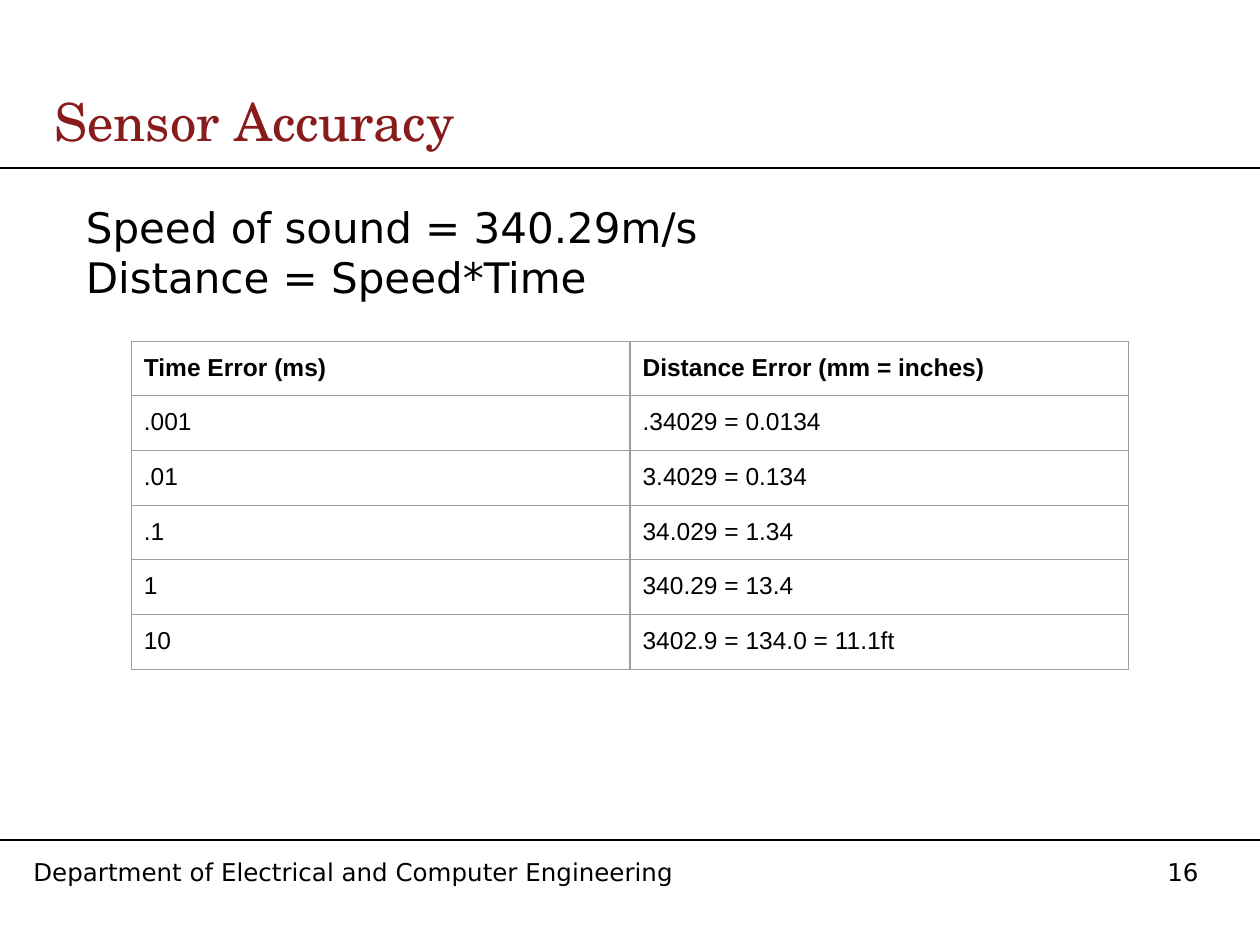
"""Build the sensor accuracy slide with its table of time and distance errors."""
import pptx
import pptx.dml.color
import pptx.enum.shapes
import pptx.enum.text
import pptx.oxml
import pptx.oxml.ns
import pptx.util
from lxml import etree

Pt = pptx.util.Pt
RGBColor = pptx.dml.color.RGBColor
ANCHOR = pptx.enum.text.MSO_ANCHOR
BLACK = RGBColor(0x00, 0x00, 0x00)
MAROON = RGBColor(0x88, 0x1C, 0x1C)
GREY = RGBColor(0x9E, 0x9E, 0x9E)
SANS = "DejaVu Sans"


def style(para, face, size, color, bold=False):
    for run in para.runs:
        run.font.name = face
        run.font.size = Pt(size)
        run.font.color.rgb = color
        run.font.bold = bold


def add_text(left, top, width, height, text, face, size, color, pad=3.6, anchor=ANCHOR.TOP):
    box = slide.shapes.add_textbox(Pt(left), Pt(top), Pt(width), Pt(height))
    frame = box.text_frame
    frame.word_wrap = True
    frame.vertical_anchor = anchor
    frame.margin_left = frame.margin_right = Pt(7.2)
    frame.margin_top = frame.margin_bottom = Pt(pad)
    frame.text = text
    for para in frame.paragraphs:
        style(para, face, size, color)
    return frame


deck = pptx.Presentation()
deck.slide_width = Pt(720)
deck.slide_height = Pt(540)
slide = deck.slides.add_slide(deck.slide_layouts[6])

for y in (96, 480):
    rule = slide.shapes.add_connector(
        pptx.enum.shapes.MSO_CONNECTOR.STRAIGHT, Pt(0), Pt(y), Pt(720), Pt(y))
    rule.line.color.rgb = BLACK
    rule.line.width = Pt(1)
    etree.SubElement(rule.line._get_or_add_ln().getparent(), pptx.oxml.ns.qn("a:effectLst"))

add_text(660, 486, 48, 24, "16", SANS, 14, BLACK)
add_text(12, 486, 401, 24, "Department of Electrical and Computer Engineering", SANS, 14, BLACK)
add_text(24, 48, 696, 42, "Sensor Accuracy", "TeX Gyre Schola", 30, MAROON, 7.2, ANCHOR.MIDDLE)

body = add_text(30, 108, 642, 354, "Speed of sound = 340.29m/s\nDistance = Speed*Time",
                SANS, 24, BLACK, 7.2)
for para in body.paragraphs:
    props = para._p.get_or_add_pPr()
    props.set("marL", str(Pt(27)))
    props.set("indent", str(Pt(-15)))

rows = [
    ("Time Error (ms)", "Distance Error (mm = inches)"),
    (".001", ".34029 = 0.0134"),
    (".01", "3.4029 = 0.134"),
    (".1", "34.029 = 1.34"),
    ("1", "340.29 = 13.4"),
    ("10", "3402.9 = 134.0 = 11.1ft"),
]
grid = slide.shapes.add_table(len(rows), 2, Pt(75), Pt(195), Pt(570), Pt(180.6)).table
grid.first_row = grid.horz_banding = False
for col in grid.columns:
    col.width = Pt(285)
for r, row in enumerate(rows):
    grid.rows[r].height = Pt(30.1)
    for c, text in enumerate(row):
        cell = grid.cell(r, c)
        cell.margin_left = cell.margin_right = Pt(7.2)
        cell.margin_top = cell.margin_bottom = Pt(7.2)
        cell.text_frame.text = text
        style(cell.text_frame.paragraphs[0], "Arial", 14, BLACK, r == 0)
        props = cell._tc.get_or_add_tcPr()
        for side in "LRTB":
            props.append(pptx.oxml.parse_xml(
                f'<a:ln{side} {pptx.oxml.ns.nsdecls("a")} w="{Pt(0.75)}"><a:solidFill>'
                f'<a:srgbClr val="{GREY}"/></a:solidFill></a:ln{side}>'))
        cell.fill.background()

deck.save("out.pptx")
